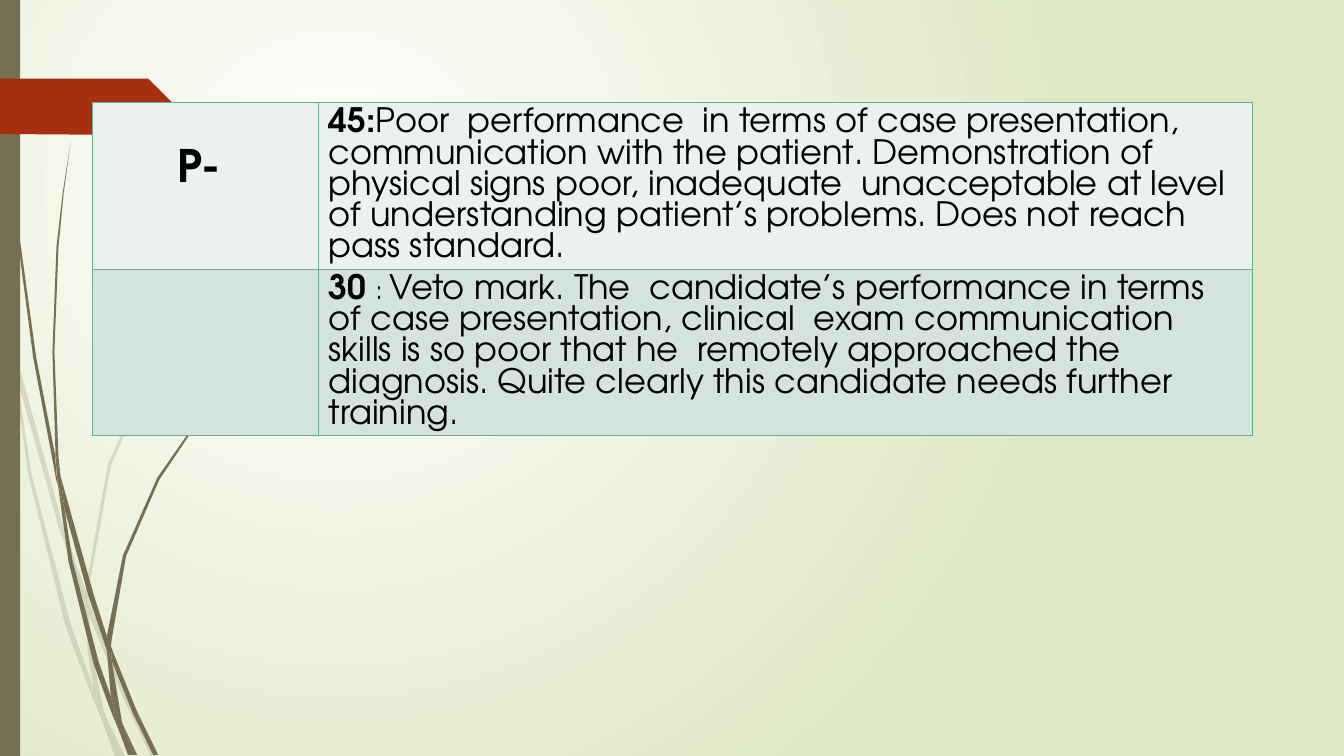
import lxml.etree
import pptx
import pptx.dml.color
import pptx.enum.shapes
import pptx.oxml.ns
import pptx.util

RGBColor = pptx.dml.color.RGBColor
qn = pptx.oxml.ns.qn

WHITE = RGBColor(0xFF, 0xFF, 0xFF)
BLACK = RGBColor(0x00, 0x00, 0x00)
PALE_LIME = RGBColor(0xDF, 0xE8, 0xC4)
OLIVE = RGBColor(0x76, 0x6F, 0x54)
RUST = RGBColor(0xA5, 0x30, 0x10)
SAGE = RGBColor(0x6A, 0xAC, 0x91)
BAND_LIGHT = RGBColor(0xEB, 0xF1, 0xEE)
BAND_DARK = RGBColor(0xD4, 0xE3, 0xDC)

FONT = "TeX Gyre Adventor"
CELL = pptx.util.Inches(0.01)  # side of one grid square
COLUMNS, ROWS = 1333, 750

# Blades of grass: corners as (column, row) on the grid.
FAINT_BLADES = [
    [(11, 350), (9, 322), (0, 282), (0, 299), (10, 344)],
    [(58, 522), (84, 599), (85, 586), (62, 520), (14, 345), (17, 376)],
    [(92, 607), (88, 596), (88, 610), (123, 694), (150, 751), (155, 751), (127, 692)],
    [(119, 751), (124, 751), (105, 711)],
    [(93, 683), (70, 619), (31, 469), (17, 376), (11, 350), (28, 470), (65, 621),
     (92, 693), (101, 714), (99, 707)],
    [(84, 599), (87, 646), (93, 683), (96, 692), (105, 711), (103, 706), (91, 646),
     (88, 610), (88, 608)],
    [(88, 584), (110, 462), (160, 349), (229, 245), (268, 198), (290, 175), (312, 154),
     (312, 153), (289, 175), (268, 197), (228, 244), (158, 348), (107, 461), (85, 584),
     (85, 586), (88, 596)],
    [(101, 714), (114, 751), (119, 751)],
    [(88, 608), (88, 610), (88, 596), (85, 586), (84, 599)],
    [(96, 692), (93, 683), (99, 707), (101, 714), (119, 751), (105, 711)],
]
SOLID_BLADES = [
    [(7, 110), (17, 233), (33, 355), (56, 477), (57, 481), (55, 457), (55, 453),
     (36, 355), (19, 232), (8, 109), (5, 48), (4, 0), (3, 0), (4, 48)],
    [(88, 592), (106, 645), (106, 633), (106, 631), (93, 590), (60, 472), (64, 505)],
    [(113, 649), (110, 641), (111, 656), (132, 708), (152, 749), (157, 749), (136, 706)],
    [(110, 691), (98, 657), (72, 556), (64, 505), (57, 477), (68, 557), (93, 659),
     (111, 708), (117, 722), (116, 717)],
    [(60, 472), (58, 453), (54, 349), (58, 245), (63, 193), (70, 141), (62, 193),
     (56, 245), (52, 349), (55, 449)],
    [(133, 749), (136, 749), (122, 719)],
    [(57, 477), (64, 505), (60, 472), (55, 449), (55, 453)],
    [(111, 633), (125, 552), (158, 476), (205, 406), (231, 374), (245, 359), (261, 344),
     (260, 344), (245, 358), (231, 373), (204, 405), (156, 474), (122, 551), (106, 631),
     (110, 641)],
    [(117, 722), (127, 749), (131, 749)],
    [(106, 645), (110, 691), (116, 706), (122, 719), (121, 716), (111, 656), (109, 651)],
    [(106, 645), (109, 651), (111, 656), (110, 641), (106, 631), (106, 633)],
    [(116, 706), (110, 691), (116, 717), (117, 722), (130, 749), (133, 749), (122, 719)],
]
TAG = [(173, 108), (148, 133), (146, 134), (136, 134), (0, 133), (0, 78), (146, 78),
       (148, 79), (173, 104), (174, 106)]

# Each span is (text, points, bold).
GRADES = [
    ([("P-", 32, True)],
     [("45:", 24, True),
      ("Poor  performance  in terms of case presentation,  communication with the patient. "
       "Demonstration of physical signs poor, inadequate  unacceptable at level of "
       "understanding patient’s problems. Does not reach pass standard.", 24, False)]),
    ([],
     [("30 ", 24, True), (": ", 18, False),
      ("Veto mark. The  candidate’s performance in terms of case presentation, clinical  "
       "exam communication skills is so poor that he  remotely approached the diagnosis. "
       "Quite clearly this candidate needs further training.", 24, False)]),
]


class GridPage:
    """Draws on one page; every length counts grid squares."""

    def __init__(self, deck):
        self.page = deck.slides.add_slide(deck.slide_layouts[6])
        self.shapes = self.page.shapes

    def radial_background(self, inner, outer):
        fill = self.page.background.fill
        fill.gradient()
        for stop, color in zip(fill.gradient_stops, (inner, outer)):
            stop.color.rgb = color
        gradient = self.page.element.find(".//" + qn("a:gradFill"))
        gradient.remove(gradient.find(qn("a:lin")))
        circle = lxml.etree.SubElement(gradient, qn("a:path"), path="circle")
        lxml.etree.SubElement(circle, qn("a:fillToRect"),
                              l="50000", t="50000", r="100000", b="100000")

    def paint(self, shape, color, opacity):
        shape.shadow.inherit = False
        shape.fill.solid()
        shape.fill.fore_color.rgb = color
        shape.line.fill.background()
        if opacity < 100:
            tint = shape.element.spPr.find(".//" + qn("a:srgbClr"))
            lxml.etree.SubElement(tint, qn("a:alpha"), val=str(opacity * 1000))

    def outline(self, corners, color, opacity=100):
        builder = self.shapes.build_freeform(*corners[0], scale=CELL)
        builder.add_line_segments(corners[1:], close=True)
        self.paint(builder.convert_to_shape(), color, opacity)

    def bar(self, left, top, width, height, color):
        box = self.shapes.add_shape(pptx.enum.shapes.MSO_SHAPE.RECTANGLE, left * CELL,
                                    top * CELL, width * CELL, height * CELL)
        self.paint(box, color, 100)

    def table(self, left, top, widths, row_height, rows, bands):
        frame = self.shapes.add_table(len(rows), len(widths), left * CELL, top * CELL,
                                      sum(widths) * CELL, len(rows) * row_height * CELL)
        grid = frame.table
        grid.first_row = grid.horz_banding = False
        for column, width in zip(grid.columns, widths):
            column.width = width * CELL
        for r, (row, band) in enumerate(zip(rows, bands)):
            for c, spans in enumerate(row):
                cell = grid.cell(r, c)
                self.border(cell, SAGE)
                cell.fill.solid()
                cell.fill.fore_color.rgb = band
                self.fill_text(cell.text_frame.paragraphs[0], spans)
        return grid

    def border(self, cell, color):
        properties = cell._tc.get_or_add_tcPr()
        for side in ("a:lnL", "a:lnR", "a:lnT", "a:lnB"):
            edge = lxml.etree.SubElement(properties, qn(side), w=str(pptx.util.Pt(1)))
            solid = lxml.etree.SubElement(edge, qn("a:solidFill"))
            lxml.etree.SubElement(solid, qn("a:srgbClr"), val=str(color))

    def fill_text(self, para, spans):
        for text, points, bold in spans:
            span = para.add_run()
            span.text = text
            span.font.name = FONT
            span.font.size = pptx.util.Pt(points)
            span.font.bold = bold
            span.font.color.rgb = BLACK


def main():
    deck = pptx.Presentation()
    deck.slide_width = COLUMNS * CELL
    deck.slide_height = ROWS * CELL
    page = GridPage(deck)
    page.radial_background(WHITE, PALE_LIME)
    for blade in FAINT_BLADES:
        page.outline(blade, OLIVE, opacity=20)
    for blade in SOLID_BLADES:
        page.outline(blade, OLIVE)
    page.bar(0, 0, 20, ROWS, OLIVE)
    page.outline(TAG, RUST)
    grades = page.table(92, 102, [224, 926], 165, GRADES, [BAND_LIGHT, BAND_DARK])
    grade = grades.cell(0, 0)
    grade.margin_left = 84 * CELL
    grade.margin_top = 46 * CELL
    deck.save("out.pptx")


if __name__ == "__main__":
    main()
